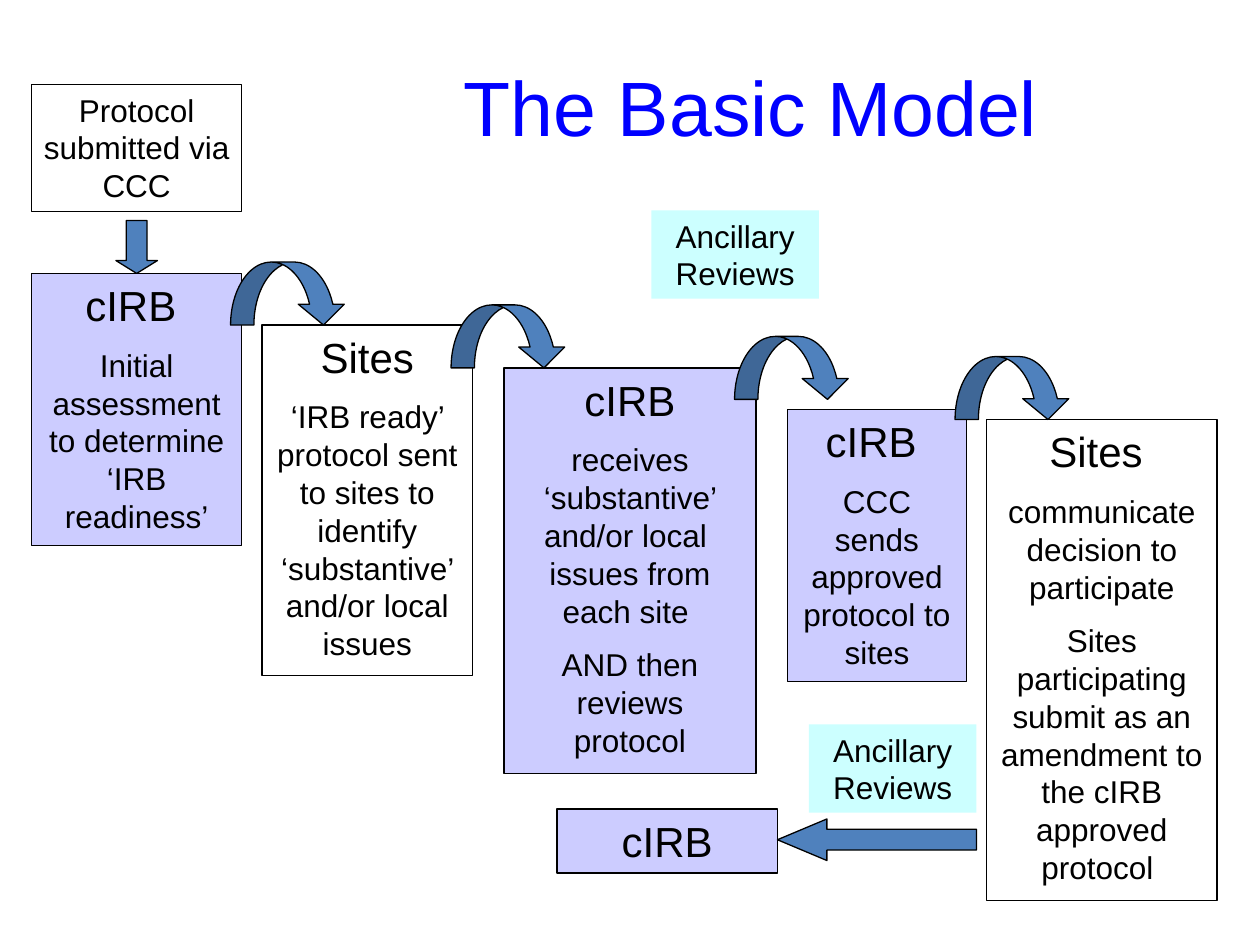
from dataclasses import dataclass

from pptx import Presentation
from pptx.dml.color import RGBColor
from pptx.enum.shapes import MSO_SHAPE
from pptx.enum.text import MSO_ANCHOR, PP_ALIGN
from pptx.util import Inches, Pt


@dataclass(frozen=True)
class Theme:
    font: str = "Arial"
    title_size: int = 44
    heading_size: int = 24
    body_size: int = 18
    text: str = "000000"
    title: str = "0000FF"
    board: str = "CCCCFF"
    ancillary: str = "CCFFFF"
    arrow: str = "4F81BD"
    line: str = "000000"
    line_width: float = 0.75


THEME = Theme()


def rgb(value):
    return RGBColor.from_string(value)


def add_outlined_shape(page, kind, box, fill=None, line=THEME.line):
    shape = page.shapes.add_shape(kind, *(Inches(length) for length in box))
    shape.shadow.inherit = False
    if fill:
        shape.fill.solid()
        shape.fill.fore_color.rgb = rgb(fill)
    else:
        shape.fill.background()
    if line:
        shape.line.color.rgb = rgb(line)
        shape.line.width = Pt(THEME.line_width)
    else:
        shape.line.fill.background()
    return shape


def write_paragraphs(frame, paragraphs, color=THEME.text):
    """Fill the frame with centred (text, size) paragraphs."""
    frame.word_wrap = True
    frame.vertical_anchor = MSO_ANCHOR.TOP
    for index, (text, size) in enumerate(paragraphs):
        para = frame.add_paragraph() if index else frame.paragraphs[0]
        para.text = text
        para.alignment = PP_ALIGN.CENTER
        para.space_before = Pt(size / 2 if index else 0)
        para.font.name = THEME.font
        para.font.size = Pt(size)
        para.font.color.rgb = rgb(color)


def add_title(page, box, text):
    title = page.shapes.title
    title.left, title.top, title.width, title.height = map(Inches, box)
    write_paragraphs(title.text_frame, [(text, THEME.title_size)], THEME.title)


def add_step(page, box, heading="", body=(), fill=None, line=THEME.line):
    step = add_outlined_shape(page, MSO_SHAPE.RECTANGLE, box, fill, line)
    paragraphs = [(heading, THEME.heading_size)] if heading else []
    paragraphs += [(text, THEME.body_size) for text in body]
    write_paragraphs(step.text_frame, paragraphs)


def add_arrow(page, kind, box, adjustments):
    arrow = add_outlined_shape(page, kind, box, THEME.arrow)
    for index, value in enumerate(adjustments):
        arrow.adjustments[index] = value


def add_steps(page):
    add_step(page, (0.25, 0.67, 1.67, 1.01), body=["Protocol submitted via CCC"])
    add_step(page, (0.25, 2.17, 1.67, 2.16), "cIRB ",
             ["Initial assessment to determine ‘IRB readiness’"], THEME.board)
    add_step(page, (2.08, 2.58, 1.67, 2.78), "Sites",
             ["‘IRB ready’ protocol sent to sites to identify "
              "‘substantive’ and/or local issues"])
    add_step(page, (4, 2.92, 2, 3.22), "cIRB",
             ["receives ‘substantive’ and/or local  issues from each site ",
              "AND then reviews protocol"], THEME.board)
    add_step(page, (6.25, 3.25, 1.42, 2.16), "cIRB ",
             ["CCC sends approved protocol to sites"], THEME.board)
    add_step(page, (7.83, 3.33, 1.83, 3.82), "Sites ",
             ["communicate decision to participate",
              "Sites participating submit as an amendment to the cIRB "
              "approved protocol "])
    add_step(page, (4.42, 6.42, 1.75, 0.51), "cIRB", fill=THEME.board)


def add_arrows(page):
    add_arrow(page, MSO_SHAPE.DOWN_ARROW, (0.92, 1.75, 0.33, 0.42), (0.5, 0.31))
    for left, top in ((1.83, 2.08), (3.58, 2.42), (5.83, 2.67), (7.58, 2.83)):
        add_arrow(page, MSO_SHAPE.CURVED_DOWN_ARROW, (left, top, 0.92, 0.5),
                  (0.37, 0.73, 0.33))
    add_arrow(page, MSO_SHAPE.LEFT_ARROW, (6.17, 6.5, 1.58, 0.33), (0.5, 1.19))


def add_ancillary_reviews(page):
    for left, top in ((5.17, 1.67), (6.42, 5.75)):
        add_step(page, (left, top, 1.33, 0.7), body=["Ancillary Reviews"],
                 fill=THEME.ancillary, line=None)


def main():
    deck = Presentation()
    deck.slide_width, deck.slide_height = Inches(10), Inches(7.5)
    page = deck.slides.add_slide(deck.slide_layouts.get_by_name("Title Only"))
    add_title(page, (3, 0.42, 5.92, 0.83), "The Basic Model")
    add_steps(page)
    add_arrows(page)
    add_ancillary_reviews(page)
    deck.save("out.pptx")


if __name__ == "__main__":
    main()
